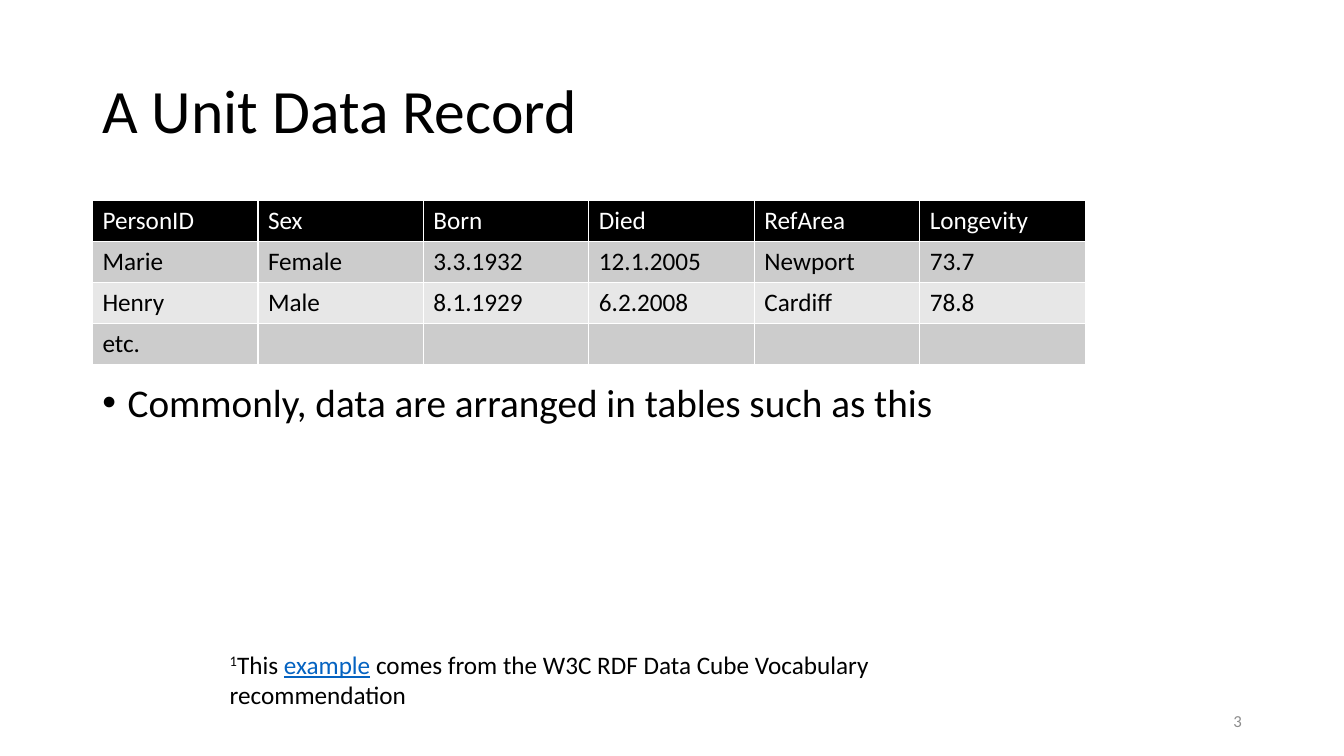
from dataclasses import dataclass, field

from lxml.etree import SubElement
from pptx import Presentation
from pptx.dml.color import RGBColor
from pptx.enum.text import MSO_ANCHOR, PP_ALIGN
from pptx.oxml.ns import qn
from pptx.slide import Slide
from pptx.text.text import Font
from pptx.util import Cm, Pt


@dataclass(frozen=True)
class Theme:
    """Font, type sizes and colours of the slide."""
    face: str = "Calibri"
    title: int = 44
    body: int = 28
    note: int = 18
    page: int = 12
    ink: str = "000000"
    paper: str = "FFFFFF"
    bands: tuple[str, str] = ("CCCCCC", "E7E7E7")
    link: str = "0563C1"
    grey: str = "8C8C8C"


@dataclass(frozen=True)
class Run:
    """Words with their own colour, underline or raised baseline."""
    words: str
    color: str | None = None
    line: bool = False
    rise: int = 0


@dataclass(frozen=True)
class Block:
    """A text box, measured in centimetres."""
    box: tuple[float, float, float, float]
    runs: list[Run]
    size: int
    color: str = field(default=Theme.ink)
    anchor: MSO_ANCHOR = MSO_ANCHOR.TOP
    align: PP_ALIGN = PP_ALIGN.LEFT
    space: float = 1.0
    before: int = 0
    bullet: bool = False


THEME = Theme()
ROWS = [
    ["PersonID", "Sex", "Born", "Died", "RefArea", "Longevity"],
    ["Marie", "Female", "3.3.1932", "12.1.2005", "Newport", "73.7"],
    ["Henry", "Male", "8.1.1929", "6.2.2008", "Cardiff", "78.8"],
    ["etc."] + [""] * 5,
]
BLOCKS = [
    Block((2.33, 1.01, 29.21, 3.68), [Run("A Unit Data Record")],
          THEME.title, anchor=MSO_ANCHOR.MIDDLE, space=0.9),
    Block((2.33, 9.53, 29.21, 6.35),
          [Run("Commonly, data are arranged in tables such as this")],
          THEME.body, space=0.9, before=10, bullet=True),
    Block((5.54, 16.23, 16.94, 1.8),
          [Run("1", rise=30000), Run("This "),
           Run("example", THEME.link, line=True),
           Run(" comes from the W3C RDF Data Cube Vocabulary recommendation")],
          THEME.note),
    Block((23.93, 17.65, 7.62, 1.02), [Run("3")], THEME.page, THEME.grey,
          MSO_ANCHOR.MIDDLE, PP_ALIGN.RIGHT),
]


def style(font: Font, size: int, color: str) -> None:
    """Set the face, size and colour of a font."""
    font.name = THEME.face
    font.size = Pt(size)
    font.color.rgb = RGBColor.from_string(color)


def draw_block(slide: Slide, block: Block) -> None:
    """Add one text box with its single paragraph."""
    frame = slide.shapes.add_textbox(*map(Cm, block.box)).text_frame
    frame.word_wrap = True
    frame.vertical_anchor = block.anchor
    para = frame.paragraphs[0]
    para.alignment = block.align
    para.line_spacing = block.space
    para.space_before = Pt(block.before)
    if block.bullet:
        props = para._p.get_or_add_pPr()
        props.set("marL", str(Cm(0.64)))
        props.set("indent", str(-Cm(0.64)))
        SubElement(props, qn("a:buFont"), typeface="Arial")
        SubElement(props, qn("a:buChar"), char="•")
    style(para.font, block.size, block.color)
    for part in block.runs:
        run = para.add_run()
        run.text = part.words
        if part.color:
            run.font.color.rgb = RGBColor.from_string(part.color)
        if part.line:
            run.font.underline = True
        if part.rise:
            run._r.get_or_add_rPr().set("baseline", str(part.rise))


def draw_table(slide: Slide) -> None:
    """Add the table of persons with a dark head and banded rows."""
    wide, high = len(ROWS[0]), len(ROWS)
    table = slide.shapes.add_table(
        high, wide, Cm(2.33), Cm(5.06), Cm(4.17 * wide), Cm(1.03 * high)).table
    for i, row in enumerate(ROWS):
        fill = THEME.bands[(i - 1) % 2] if i else THEME.ink
        color = THEME.ink if i else THEME.paper
        for j, words in enumerate(row):
            cell = table.cell(i, j)
            cell.text = words
            cell.fill.solid()
            cell.fill.fore_color.rgb = RGBColor.from_string(fill)
            font = cell.text_frame.paragraphs[0].font
            style(font, THEME.note, color)
            font.bold = False


def main() -> None:
    """Build the slide and save it."""
    deck = Presentation()
    deck.slide_width, deck.slide_height = Cm(33.87), Cm(19.05)
    slide = deck.slides.add_slide(deck.slide_layouts[6])
    draw_table(slide)
    for block in BLOCKS:
        draw_block(slide, block)
    deck.save("out.pptx")


if __name__ == "__main__":
    main()
